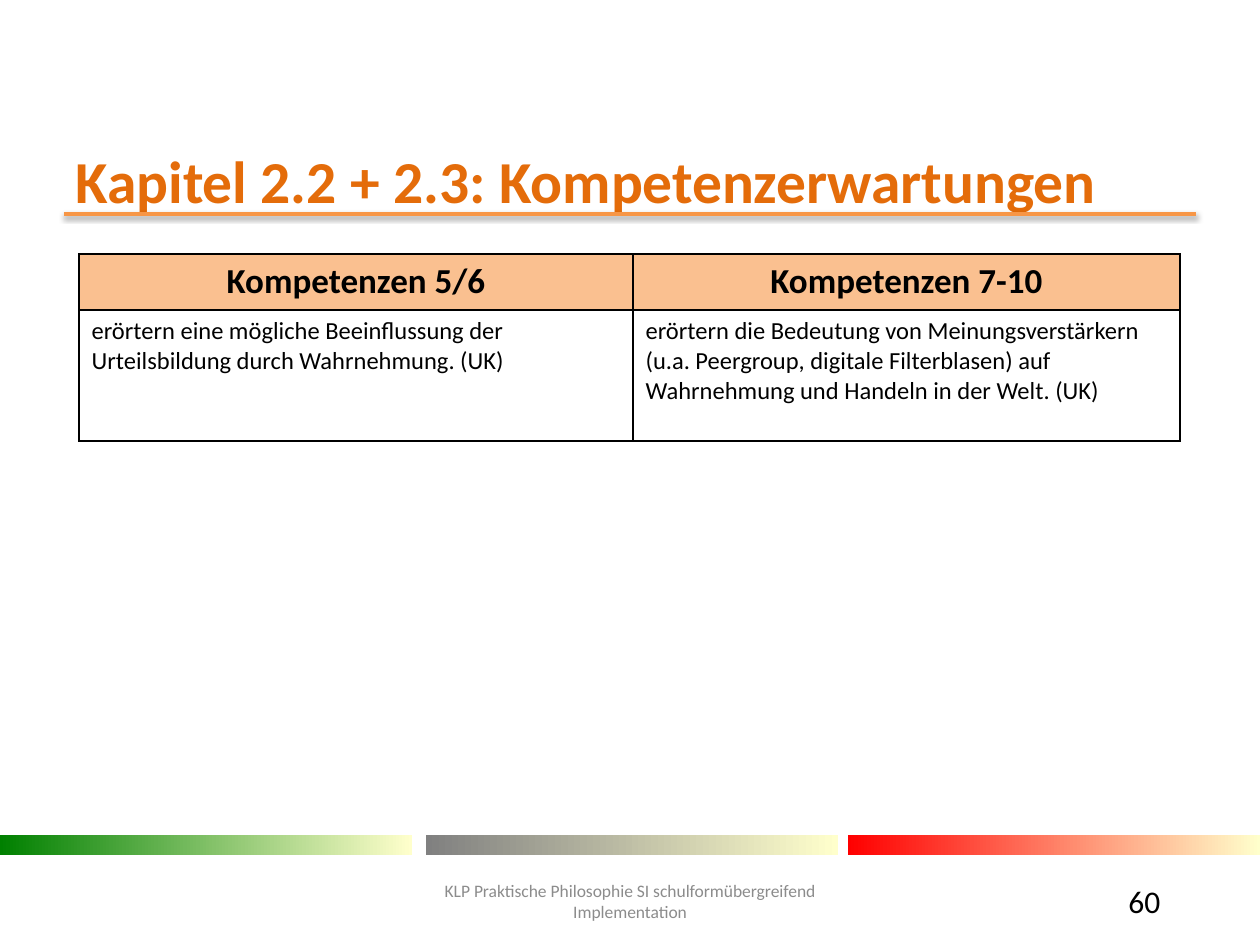
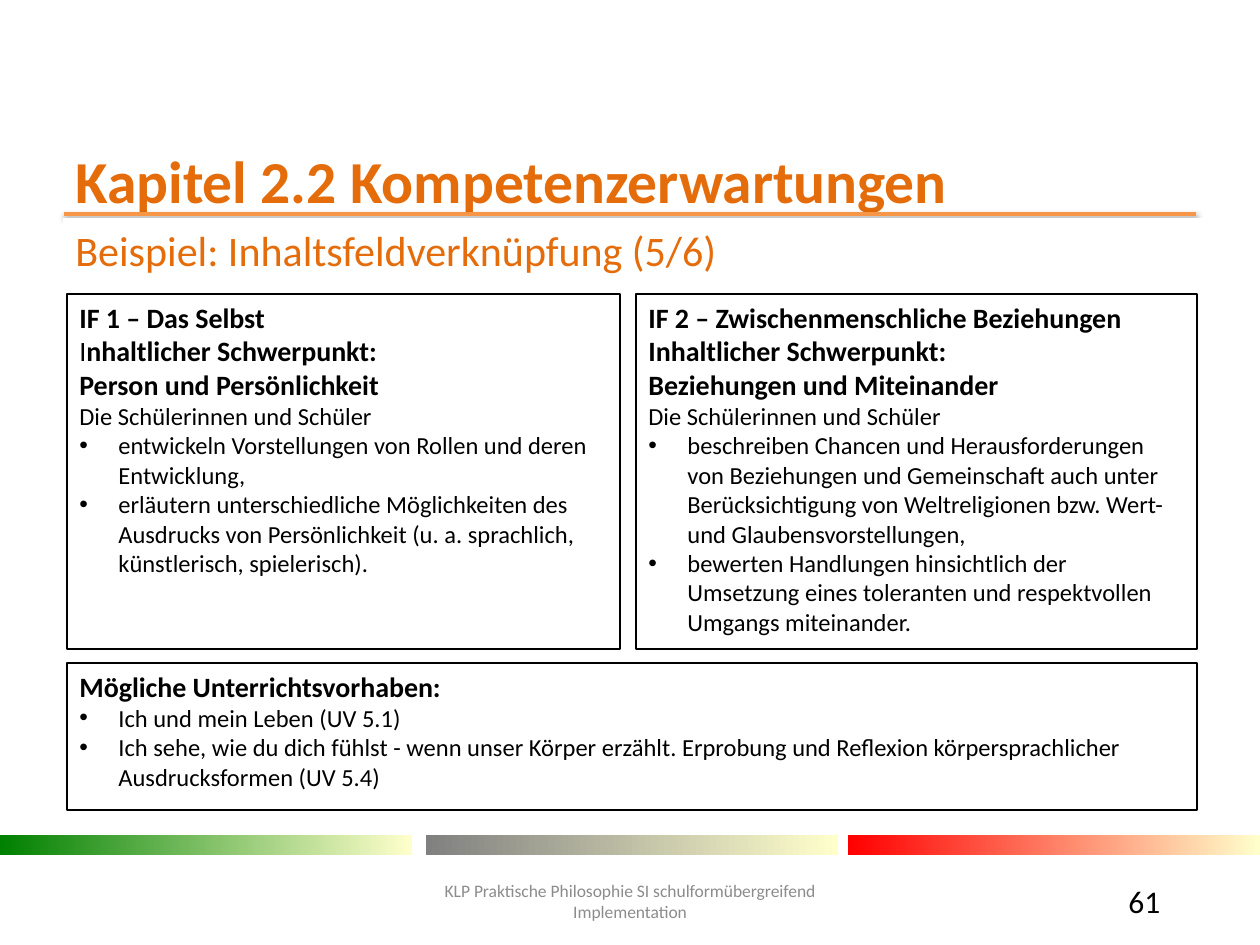
"""Build two slides on competence expectations in Practical Philosophy."""
from dataclasses import dataclass

from lxml import etree
from pptx import Presentation
from pptx import util as u
from pptx.dml.color import RGBColor
from pptx.enum import shapes, text
from pptx.oxml import ns

PX_PER_INCH = 126
TITLE_ONLY = 5


@dataclass(frozen=True)
class Theme:
    """Colours, font and type sizes of the deck."""
    font: str = "Calibri"
    title: str = "E46C0A"
    rule: str = "F79646"
    header: str = "FAC090"
    ink: str = "000000"
    paper: str = "FFFFFF"
    footer: str = "8C8C8C"
    band_end: str = "FFFFCC"
    band_starts: tuple = ("008000", "808080", "FF0000")
    title_size: int = 34
    subtitle_size: int = 24
    header_size: int = 20
    number_size: int = 18
    heading_size: int = 16
    body_size: int = 14
    footer_size: int = 10


THEME = Theme()
FOOTER = ("KLP Praktische Philosophie SI schulformübergreifend", "Implementation")

COMPETENCES = {
    "Kompetenzen 5/6":
        "erörtern eine mögliche Beeinflussung der Urteilsbildung durch "
        "Wahrnehmung. (UK)",
    "Kompetenzen 7-10":
        "erörtern die Bedeutung von Meinungsverstärkern (u.a. Peergroup, "
        "digitale Filterblasen) auf Wahrnehmung und Handeln in der Welt. (UK)",
}

SELF_FIELD = dict(
    headings=("IF 1 – Das Selbst", "Inhaltlicher Schwerpunkt:",
              "Person und Persönlichkeit"),
    intro="Die Schülerinnen und Schüler",
    bullets=(
        "entwickeln Vorstellungen von Rollen und deren Entwicklung,",
        "erläutern unterschiedliche Möglichkeiten des Ausdrucks von "
        "Persönlichkeit (u. a. sprachlich, künstlerisch, spielerisch).",
    ),
    light_initial=1,
)
RELATIONS_FIELD = dict(
    headings=("IF 2 – Zwischenmenschliche Beziehungen",
              "Inhaltlicher Schwerpunkt:", "Beziehungen und Miteinander"),
    intro="Die Schülerinnen und Schüler",
    bullets=(
        "beschreiben Chancen und Herausforderungen von Beziehungen und "
        "Gemeinschaft auch unter Berücksichtigung von Weltreligionen bzw. "
        "Wert- und Glaubensvorstellungen,",
        "bewerten Handlungen hinsichtlich der Umsetzung eines toleranten und "
        "respektvollen Umgangs miteinander.",
    ),
)
TEACHING_UNITS = dict(
    headings=("Mögliche Unterrichtsvorhaben:",),
    bullets=(
        "Ich und mein Leben (UV 5.1)",
        "Ich sehe, wie du dich fühlst - wenn unser Körper erzählt. Erprobung "
        "und Reflexion körpersprachlicher Ausdrucksformen (UV 5.4)",
    ),
)


def px(length):
    """Turn px into EMU."""
    return u.Emu(round(length * u.Inches(1) / PX_PER_INCH))


def emu(box):
    """Turn a box of px into EMU."""
    return [px(length) for length in box]


def rgb(colour):
    """Turn a hex string into a colour."""
    return RGBColor.from_string(colour)


def add_element(parent, tag, **attributes):
    """Append a DrawingML element and return it."""
    return etree.SubElement(parent, ns.qn(tag), attributes)


def style(paragraph, size, colour=THEME.ink, bold=False, align=text.PP_ALIGN.LEFT):
    """Format a whole paragraph."""
    paragraph.alignment = align
    font = paragraph.font
    font.name, font.size, font.bold = THEME.font, u.Pt(size), bold
    font.color.rgb = rgb(colour)


def add_bullet(paragraph):
    """Give a paragraph a hanging bullet."""
    indent = px(39)
    properties = paragraph._p.get_or_add_pPr()
    properties.set("marL", str(indent))
    properties.set("indent", str(-indent))
    add_element(properties, "a:buFont", typeface="Arial")
    add_element(properties, "a:buChar", char="•")


def next_paragraph(frame):
    """Return the empty first paragraph or a new one."""
    first = frame.paragraphs[0]
    return frame.add_paragraph() if first.runs else first


def add_line(frame, words, size, **look):
    """Add one formatted paragraph of text."""
    paragraph = next_paragraph(frame)
    paragraph.add_run().text = words
    style(paragraph, size, **look)
    return paragraph


def add_text_box(slide, box):
    """Add a wrapping text box."""
    shape = slide.shapes.add_textbox(*emu(box))
    shape.text_frame.word_wrap = True
    return shape


def add_title(slide, words, box):
    """Place and format the title placeholder."""
    title = slide.shapes.title
    title.left, title.top, title.width, title.height = emu(box)
    frame = title.text_frame
    frame.auto_size = text.MSO_AUTO_SIZE.NONE
    frame.vertical_anchor = text.MSO_ANCHOR.MIDDLE
    add_line(frame, words, THEME.title_size, colour=THEME.title, bold=True)


def add_title_rule(slide, left, top, width):
    """Draw the shadowed line below the title."""
    rule = slide.shapes.add_connector(
        shapes.MSO_CONNECTOR.STRAIGHT, *emu((left, top, left + width, top)))
    rule.line.color.rgb = rgb(THEME.rule)
    rule.line.width = u.Pt(2)
    effects = add_element(rule._element.spPr, "a:effectLst")
    shadow = add_element(effects, "a:outerShdw", blurRad=str(u.Pt(3.1)),
                         dist=str(u.Pt(1.6)), dir="5400000", rotWithShape="0")
    colour = add_element(shadow, "a:srgbClr", val=THEME.ink)
    add_element(colour, "a:alpha", val="38000")


def add_bands(slide, top, height):
    """Draw the three gradient bands above the footer."""
    for left, start in zip((0, 426, 848), THEME.band_starts):
        band = slide.shapes.add_shape(
            shapes.MSO_SHAPE.RECTANGLE, *emu((left, top, 412, height)))
        band.shadow.inherit = False
        band.line.fill.background()
        band.fill.gradient()
        band.fill.gradient_angle = 0
        for stop, colour in zip(band.fill.gradient_stops, (start, THEME.band_end)):
            stop.color.rgb = rgb(colour)


def add_footer(slide, number):
    """Write the centred footer and the slide number."""
    footer = add_text_box(slide, (412, 874, 436, 55)).text_frame
    for words in FOOTER:
        add_line(footer, words, THEME.footer_size, colour=THEME.footer,
                 align=text.PP_ALIGN.CENTER)
    page = add_text_box(slide, (1116, 876, 81, 50)).text_frame
    add_line(page, str(number), THEME.number_size)


def add_base_slide(presentation, title, number):
    """Add a slide with the shared title, bands and footer."""
    slide = presentation.slides.add_slide(presentation.slide_layouts[TITLE_ONLY])
    add_title(slide, title, (63, 155, 1134, 49))
    add_title_rule(slide, 64, 214, 1132)
    add_bands(slide, 835, 20)
    add_footer(slide, number)
    return slide


def add_cell_borders(cell):
    """Draw a thin line on all four sides of a cell."""
    properties = cell._tc.get_or_add_tcPr()
    for position, side in enumerate(("a:lnL", "a:lnR", "a:lnT", "a:lnB")):
        border = etree.Element(ns.qn(side), w=str(u.Pt(1)))
        fill = add_element(border, "a:solidFill")
        add_element(fill, "a:srgbClr", val=THEME.ink)
        properties.insert(position, border)


def fill_cell(cell, words, size, fill=None, **look):
    """Write and format one table cell."""
    add_line(cell.text_frame, words, size, **look)
    if fill:
        cell.fill.solid()
        cell.fill.fore_color.rgb = rgb(fill)
    else:
        cell.fill.background()
    add_cell_borders(cell)


def add_competence_table(slide, left, top, widths, heights):
    """Compare the competences of both stages."""
    box = (left, top, sum(widths), sum(heights))
    table = slide.shapes.add_table(len(heights), len(widths), *emu(box)).table
    table.horz_banding = False
    for row, height in zip(table.rows, heights):
        row.height = px(height)
    for index, (heading, competence) in enumerate(COMPETENCES.items()):
        table.columns[index].width = px(widths[index])
        fill_cell(table.cell(0, index), heading, THEME.header_size,
                  fill=THEME.header, bold=True, align=text.PP_ALIGN.CENTER)
        fill_cell(table.cell(1, index), competence, THEME.body_size)


def add_subtitle(slide, words, box):
    """Write the subtitle on its white panel."""
    panel = add_text_box(slide, box)
    panel.fill.solid()
    panel.fill.fore_color.rgb = rgb(THEME.paper)
    add_line(panel.text_frame, words, THEME.subtitle_size, colour=THEME.title)


def add_content_box(slide, box, headings, bullets, intro=None, light_initial=None):
    """Add an outlined box with headings, an intro and bullets."""
    shape = add_text_box(slide, box)
    shape.line.color.rgb = rgb(THEME.ink)
    shape.line.width = u.Pt(0.75)
    frame = shape.text_frame
    for index, heading in enumerate(headings):
        paragraph = add_line(frame, heading, THEME.heading_size, bold=True)
        if index == light_initial:
            initial = paragraph.runs[0]
            initial.text = heading[0]
            initial.font.bold = False
            paragraph.add_run().text = heading[1:]
    if intro:
        add_line(frame, intro, THEME.body_size)
    for words in bullets:
        paragraph = next_paragraph(frame)
        add_bullet(paragraph)
        paragraph.add_run().text = words
        style(paragraph, THEME.body_size)


def build_competence_slide(presentation):
    """Build the slide with the competence table."""
    slide = add_base_slide(presentation, "Kapitel 2.2 + 2.3: Kompetenzerwartungen", 60)
    add_competence_table(slide, 79, 254, (554, 547), (56, 131))


def build_linking_slide(presentation):
    """Build the slide that links two content fields."""
    slide = add_base_slide(presentation, "Kapitel 2.2 Kompetenzerwartungen", 61)
    add_subtitle(slide, "Beispiel: Inhaltsfeldverknüpfung (5/6)", (63, 218, 1172, 558))
    add_content_box(slide, (67, 294, 553, 355), **SELF_FIELD)
    add_content_box(slide, (67, 663, 1130, 147), **TEACHING_UNITS)
    add_content_box(slide, (636, 294, 561, 355), **RELATIONS_FIELD)


def main():
    """Build and save the presentation."""
    presentation = Presentation()
    presentation.slide_width, presentation.slide_height = px(1260), px(945)
    build_competence_slide(presentation)
    build_linking_slide(presentation)
    presentation.save("out.pptx")


if __name__ == "__main__":
    main()
